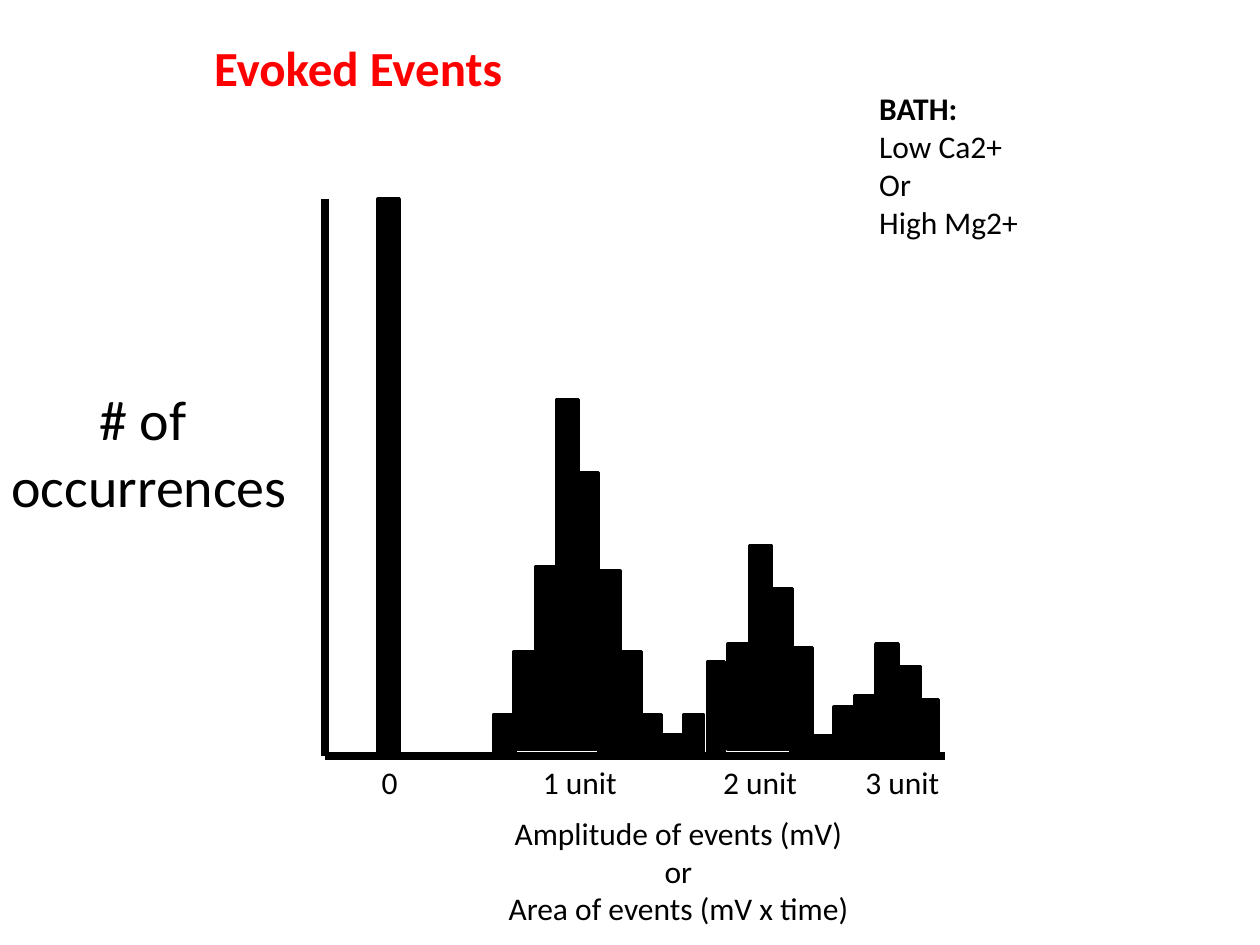
from lxml.etree import SubElement
from pptx import Presentation
from pptx.dml.color import RGBColor
from pptx.enum.shapes import MSO_CONNECTOR, MSO_SHAPE
from pptx.enum.text import MSO_AUTO_SIZE, PP_ALIGN
from pptx.oxml.ns import qn
from pptx.util import Pt

PX = 9144  # 100 px to the inch
COLORS = {"ink": "000000", "title": "FF0000"}

# left, width, top, bottom of each bar within the plot
BARS = [
    (42, 17, 0, 442),
    (134, 17, 409, 442), (150, 17, 359, 437), (167, 17, 292, 437),
    (184, 17, 159, 437), (200, 17, 217, 437), (217, 17, 295, 440),
    (234, 17, 359, 439), (250, 17, 409, 438), (267, 17, 425, 442),
    (285, 15, 409, 442), (304, 13, 367, 439), (320, 17, 353, 437),
    (337, 17, 275, 437), (354, 17, 309, 437), (370, 17, 356, 440),
    (386, 16, 426, 444), (404, 15, 403, 442), (420, 18, 394, 439),
    (437, 18, 353, 439), (454, 18, 371, 439), (470, 17, 397, 442),
]
TICKS = [("0", 35, 33), ("1 unit", 163, 80), ("2 unit", 306, 80), ("3 unit", 419, 80)]


def color(name):
    return RGBColor.from_string(COLORS[name])


def scale(*lengths):
    return [n * PX for n in lengths]


def add_text(slide, box, lines, size=18, ink="ink", align=PP_ALIGN.LEFT, bold=0, wrap=False):
    """Write one paragraph per line; the first `bold` lines are bold."""
    frame = slide.shapes.add_textbox(*scale(*box)).text_frame
    frame.word_wrap = wrap
    frame.auto_size = MSO_AUTO_SIZE.SHAPE_TO_FIT_TEXT
    frame.text = "\n".join(lines)
    for i, para in enumerate(frame.paragraphs):
        para.alignment = align
        for run in para.runs:
            font = run.font
            font.name, font.size, font.bold = "Calibri", Pt(size), i < bold
            font.color.rgb = color(ink)


def add_axis(slide, start, end):
    line = slide.shapes.add_connector(MSO_CONNECTOR.STRAIGHT, *scale(*start, *end))
    line.line.color.rgb = color("ink")
    line.line.width = Pt(4.5)
    SubElement(line._element.spPr, qn("a:effectLst"))


def add_bar(slide, box):
    bar = slide.shapes.add_shape(MSO_SHAPE.RECTANGLE, *scale(*box))
    bar.shadow.inherit = False
    bar.fill.solid()
    bar.fill.fore_color.rgb = color("ink")
    bar.line.color.rgb = color("ink")
    bar.line.width = Pt(2)


def add_plot(slide, box):
    """Draw the axes, the bars, and the tick and axis labels around the box."""
    x, y, w, h = box
    base = y + h
    add_axis(slide, (x, y), (x, base))
    add_axis(slide, (x + w, base), (x, base))
    add_text(slide, (x - 260, y + 142, 241, 118), ["# of ", "occurrences"],
             size=32, align=PP_ALIGN.CENTER)
    add_text(slide, (x + 134, base + 41, 293, 101),
             ["Amplitude of events (mV)", "or", "Area of events (mV x time)"],
             align=PP_ALIGN.CENTER)
    for left, width, top, bottom in BARS:
        add_bar(slide, (x + left, y + top, width, bottom - top))
    for label, left, width in TICKS:
        add_text(slide, (x + left, base + 1, width, 40), [label])


def add_heads(slide, box):
    """Place the title and the bath note within the box."""
    x, y, w, h = box
    add_text(slide, (x, y, 251, 57), ["Evoked Events"], size=28, ink="title", bold=1)
    add_text(slide, (x + 528, y + 41, w - 528, h - 41),
             ["BATH:", "Low Ca2+", "Or", "High Mg2+"], bold=1, wrap=True)


def main():
    deck = Presentation()
    deck.slide_width, deck.slide_height = scale(1000, 750)
    slide = deck.slides.add_slide(deck.slide_layouts[6])
    add_plot(slide, (258, 158, 492, 442))
    add_heads(slide, (160, 25, 1011, 203))
    deck.save("out.pptx")


if __name__ == "__main__":
    main()
